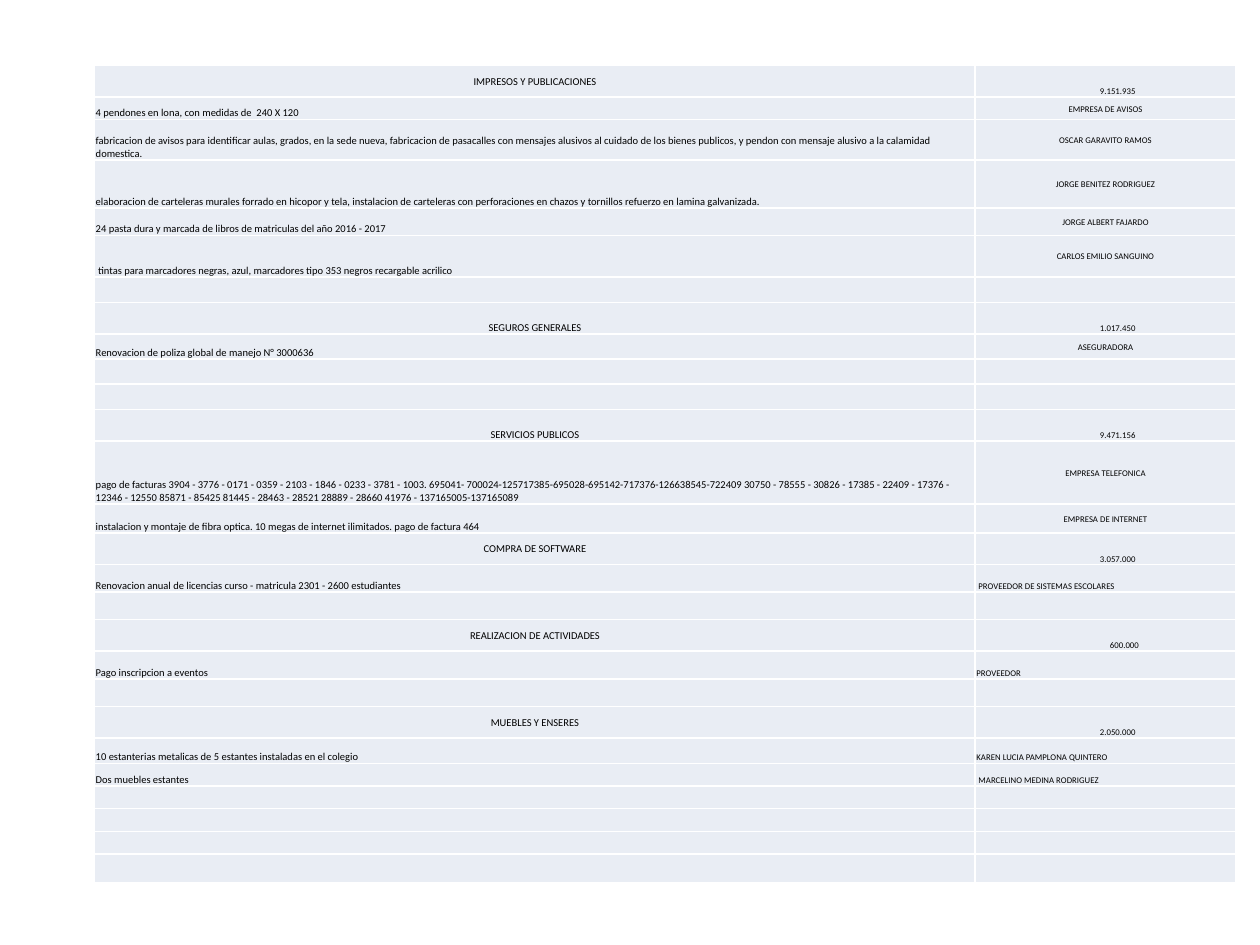
from lxml import etree
from pptx import Presentation
from pptx.dml.color import RGBColor
from pptx.enum import text as t
from pptx.oxml import ns
from pptx.util import Inches, Pt

COLORS = {"fill": "E9EDF4", "line": "FFFFFF", "text": "000000"}
FONT = "Calibri"
MID, LOW = t.MSO_ANCHOR.MIDDLE, t.MSO_ANCHOR.BOTTOM
LEFT, MIDDLE = t.PP_ALIGN.LEFT, t.PP_ALIGN.CENTER
PAD = 0.01
COLS = (6.99, 2.07)


# Row kinds: each gives a height and two cells of (text, anchor, align, indent)
def head(title, total, anchor=MID, indent=0.99):
    return 0.25, (title, anchor, MIDDLE, PAD), (total, LOW, LEFT, indent)


def item(high, detail, payee, anchor=MID, align=MIDDLE):
    return high, (detail, LOW, LEFT, PAD), (payee, anchor, align, PAD)


def low(high, detail, payee):
    return item(high, detail, payee, LOW, LEFT)


def blank(high):
    return item(high, "", "")


ROWS = [
    head("IMPRESOS Y PUBLICACIONES", "9.151.935"),
    item(0.18, "4 pendones en lona, con medidas de  240 X 120", "EMPRESA DE AVISOS"),
    item(0.32, "fabricacion de avisos para identificar aulas, grados, en la sede nueva, "
         "fabricacion de pasacalles con mensajes alusivos al cuidado de los bienes publicos, "
         "y pendon con mensaje alusivo a la calamidad domestica.", "OSCAR GARAVITO RAMOS"),
    item(0.38, "elaboracion de carteleras murales forrado en hicopor y tela, instalacion de "
         "carteleras con perforaciones en chazos y tornillos refuerzo en lamina galvanizada.",
         "JORGE BENITEZ RODRIGUEZ"),
    item(0.22, "24 pasta dura y marcada de libros de matriculas del año 2016 - 2017",
         "JORGE ALBERT FAJARDO"),
    item(0.33, " tintas para marcadores negras, azul, marcadores tipo 353 negros recargable "
         "acrilico", "CARLOS EMILIO SANGUINO"),
    blank(0.2),
    head("SEGUROS GENERALES", "1.017.450", LOW),
    item(0.2, "Renovacion de poliza global de manejo N° 3000636", "ASEGURADORA"),
    blank(0.2),
    blank(0.2),
    head("SERVICIOS PUBLICOS", "9.471.156", LOW),
    item(0.5, "pago de facturas 3904 - 3776 - 0171 - 0359 - 2103 - 1846 - 0233 - 3781 - 1003. "
         "695041- 700024-125717385-695028-695142-717376-126638545-722409 30750 - 78555 - "
         "30826 - 17385 - 22409 - 17376 - 12346 - 12550 85871 - 85425 81445 - 28463 - 28521 "
         "28889 - 28660 41976 - 137165005-137165089", "EMPRESA TELEFONICA"),
    item(0.23, "instalacion y montaje de fibra optica. 10 megas de internet ilimitados. "
         "pago de factura 464", "EMPRESA DE INTERNET"),
    head("COMPRA DE SOFTWARE", "3.057.000"),
    low(0.22, "Renovacion anual de licencias curso - matricula 2301 - 2600 estudiantes",
        " PROVEEDOR DE SISTEMAS ESCOLARES"),
    blank(0.22),
    head("REALIZACION DE ACTIVIDADES", "600.000", indent=1.07),
    low(0.22, "Pago inscripcion a eventos", "PROVEEDOR"),
    blank(0.22),
    head("MUEBLES Y ENSERES", "2.050.000"),
    low(0.2, "10 estanterias metalicas de 5 estantes instaladas en el colegio",
        "KAREN LUCIA PAMPLONA QUINTERO"),
    low(0.18, "Dos muebles estantes", " MARCELINO MEDINA RODRIGUEZ"),
    *[blank(0.18)] * 3,
    blank(0.23),
]


def edge(cell):
    """Draw a thin line on all four sides of a cell."""
    props = cell._tc.get_or_add_tcPr()
    for side in ("lnL", "lnR", "lnT", "lnB"):
        line = etree.SubElement(props, ns.qn("a:" + side), w=str(Pt(1)))
        fill = etree.SubElement(line, ns.qn("a:solidFill"))
        etree.SubElement(fill, ns.qn("a:srgbClr"), val=COLORS["line"])


def write(cell, size, words, anchor, align, indent):
    edge(cell)
    cell.fill.solid()
    cell.fill.fore_color.rgb = RGBColor.from_string(COLORS["fill"])
    cell.margin_left, cell.margin_right = Inches(indent), Inches(PAD)
    cell.margin_top, cell.margin_bottom = Inches(PAD), 0
    cell.vertical_anchor = anchor
    cell.text = words
    para = cell.text_frame.paragraphs[0]
    para.alignment = align
    para.font.name, para.font.size = FONT, Pt(size)
    para.font.color.rgb = RGBColor.from_string(COLORS["text"])


def grid(slide):
    high = sum(row[0] for row in ROWS)
    frame = slide.shapes.add_table(len(ROWS), len(COLS), Inches(0.75), Inches(0.52),
                                   Inches(sum(COLS)), Inches(high))
    table = frame.table
    table.first_row = table.horz_banding = False
    for col, wide in zip(table.columns, COLS):
        col.width = Inches(wide)
    for row, (tall, detail, payee) in zip(table.rows, ROWS):
        row.height = Inches(tall)
        write(row.cells[0], 6, *detail)
        write(row.cells[1], 5, *payee)


def main():
    deck = Presentation()
    deck.slide_width, deck.slide_height = Inches(10), Inches(7.5)
    # Expense table
    grid(deck.slides.add_slide(deck.slide_layouts[6]))
    deck.save("out.pptx")


if __name__ == "__main__":
    main()
